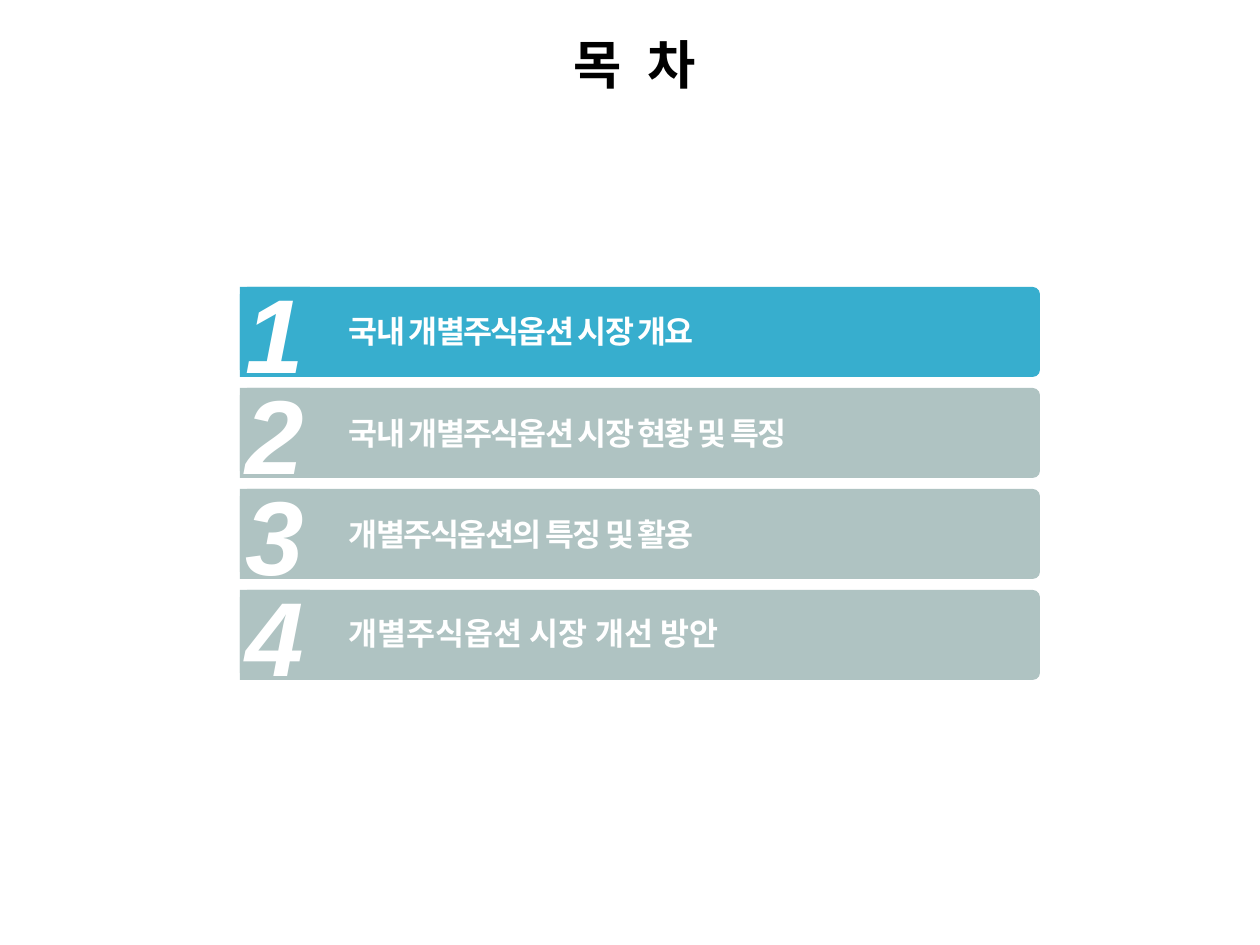
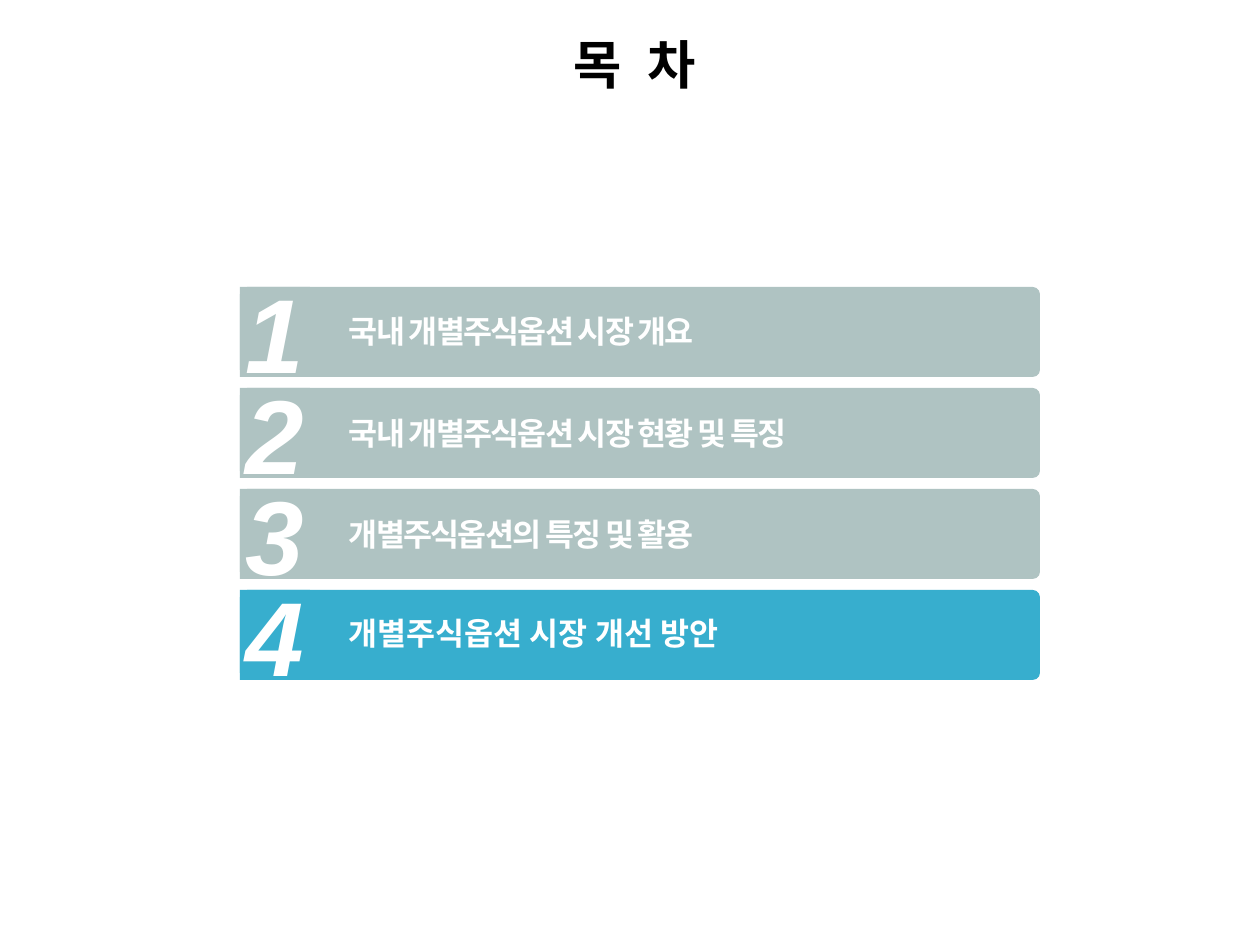
from dataclasses import dataclass
from typing import NamedTuple

from pptx import Presentation
from pptx.dml.color import RGBColor
from pptx.enum.shapes import MSO_SHAPE
from pptx.enum.text import MSO_ANCHOR, MSO_AUTO_SIZE, PP_ALIGN
from pptx.util import Emu, Pt

PX_PER_INCH = 126


def px(length):
    return Emu(round(length * 914400 / PX_PER_INCH))


class Box(NamedTuple):
    left: int
    top: int
    width: int
    height: int

    def emu(self):
        return [px(length) for length in self]


class Chapter(NamedTuple):
    title: str
    title_top: int
    spacing: int


@dataclass(frozen=True)
class Theme:
    font: str = "Arial"
    ink: RGBColor = RGBColor(0x00, 0x00, 0x00)
    paper: RGBColor = RGBColor(0xFF, 0xFF, 0xFF)
    active: RGBColor = RGBColor(0x37, 0xAE, 0xCE)
    inactive: RGBColor = RGBColor(0xAF, 0xC3, 0xC2)
    heading_size: int = 30
    number_size: int = 60
    chapter_size: int = 18


THEME = Theme()
HEADING_BOX = Box(33, 0, 1203, 136)
AGENDA_BOX = Box(240, 287, 800, 393)
BAR_HEIGHT = 90
NUMBER_WIDTH = 70
TITLE_LEFT, TITLE_WIDTH, TITLE_HEIGHT = 109, 678, 38
CORNER = 0.08

CHAPTERS = [
    Chapter("국내 개별주식옵션 시장 개요", 25, -1),
    Chapter("국내 개별주식옵션 시장 현황 및 특징", 26, -1),
    Chapter("개별주식옵션의 특징 및 활용", 26, -1),
    Chapter("개별주식옵션 시장 개선 방안", 24, 0),
]


def add_run(paragraph, text, size, color, italic=False, spacing=0):
    """Add a bold run; spacing is the extra space after each letter, in points."""
    run = paragraph.add_run()
    run.text = text
    font = run.font
    font.name = THEME.font
    font.size = Pt(size)
    font.bold = True
    font.italic = italic
    font.color.rgb = color
    if spacing:
        run._r.get_or_add_rPr().set("spc", str(spacing * 100))


def add_block(shapes, kind, box, color):
    shape = shapes.add_shape(kind, *box.emu())
    shape.shadow.inherit = False
    shape.fill.solid()
    shape.fill.fore_color.rgb = color
    shape.line.fill.background()
    return shape


def add_heading(slide, box):
    frame = slide.shapes.add_textbox(*box.emu()).text_frame
    frame.word_wrap = True
    frame.vertical_anchor = MSO_ANCHOR.MIDDLE
    paragraph = frame.paragraphs[0]
    paragraph.alignment = PP_ALIGN.CENTER
    paragraph.line_spacing = 0.9
    for text, spacing in (("목", 0), (" ", 8), ("차", 0)):
        add_run(paragraph, text, THEME.heading_size, THEME.ink, spacing=spacing)


def add_number(shapes, box, number, color):
    frame = add_block(shapes, MSO_SHAPE.RECTANGLE, box, color).text_frame
    frame.word_wrap = False
    frame.vertical_anchor = MSO_ANCHOR.MIDDLE
    paragraph = frame.paragraphs[0]
    paragraph.alignment = PP_ALIGN.CENTER
    add_run(paragraph, str(number), THEME.number_size, THEME.paper, italic=True)


def add_chapter_title(shapes, box, chapter, color):
    frame = add_block(shapes, MSO_SHAPE.RECTANGLE, box, color).text_frame
    frame.margin_left = frame.margin_right = 0
    frame.margin_top = frame.margin_bottom = 0
    frame.word_wrap = True
    frame.auto_size = MSO_AUTO_SIZE.SHAPE_TO_FIT_TEXT
    frame.vertical_anchor = MSO_ANCHOR.TOP
    paragraph = frame.paragraphs[0]
    paragraph.alignment = PP_ALIGN.LEFT
    add_run(paragraph, chapter.title, THEME.chapter_size, THEME.paper,
            spacing=chapter.spacing)


def add_chapter_bar(slide, box, number, chapter, color):
    shapes = slide.shapes.add_group_shape().shapes
    bar = add_block(shapes, MSO_SHAPE.ROUNDED_RECTANGLE, box, color)
    bar.adjustments[0] = CORNER
    add_number(shapes, box._replace(width=NUMBER_WIDTH), number, color)
    title_box = Box(box.left + TITLE_LEFT, box.top + chapter.title_top,
                    TITLE_WIDTH, TITLE_HEIGHT)
    add_chapter_title(shapes, title_box, chapter, color)


def add_agenda(slide, box, active_number):
    """Spread the chapter bars evenly over the box and highlight one."""
    pitch = (box.height - BAR_HEIGHT) // (len(CHAPTERS) - 1)
    for index, chapter in enumerate(CHAPTERS):
        number = index + 1
        color = THEME.active if number == active_number else THEME.inactive
        bar_box = box._replace(top=box.top + index * pitch, height=BAR_HEIGHT)
        add_chapter_bar(slide, bar_box, number, chapter, color)


def add_contents_slide(presentation, active_number):
    slide = presentation.slides.add_slide(presentation.slide_layouts[6])
    add_heading(slide, HEADING_BOX)
    add_agenda(slide, AGENDA_BOX, active_number)


def main():
    presentation = Presentation()
    presentation.slide_width = px(1260)
    presentation.slide_height = px(945)
    for active_number in (1, 4):
        add_contents_slide(presentation, active_number)
    presentation.save("out.pptx")


if __name__ == "__main__":
    main()
